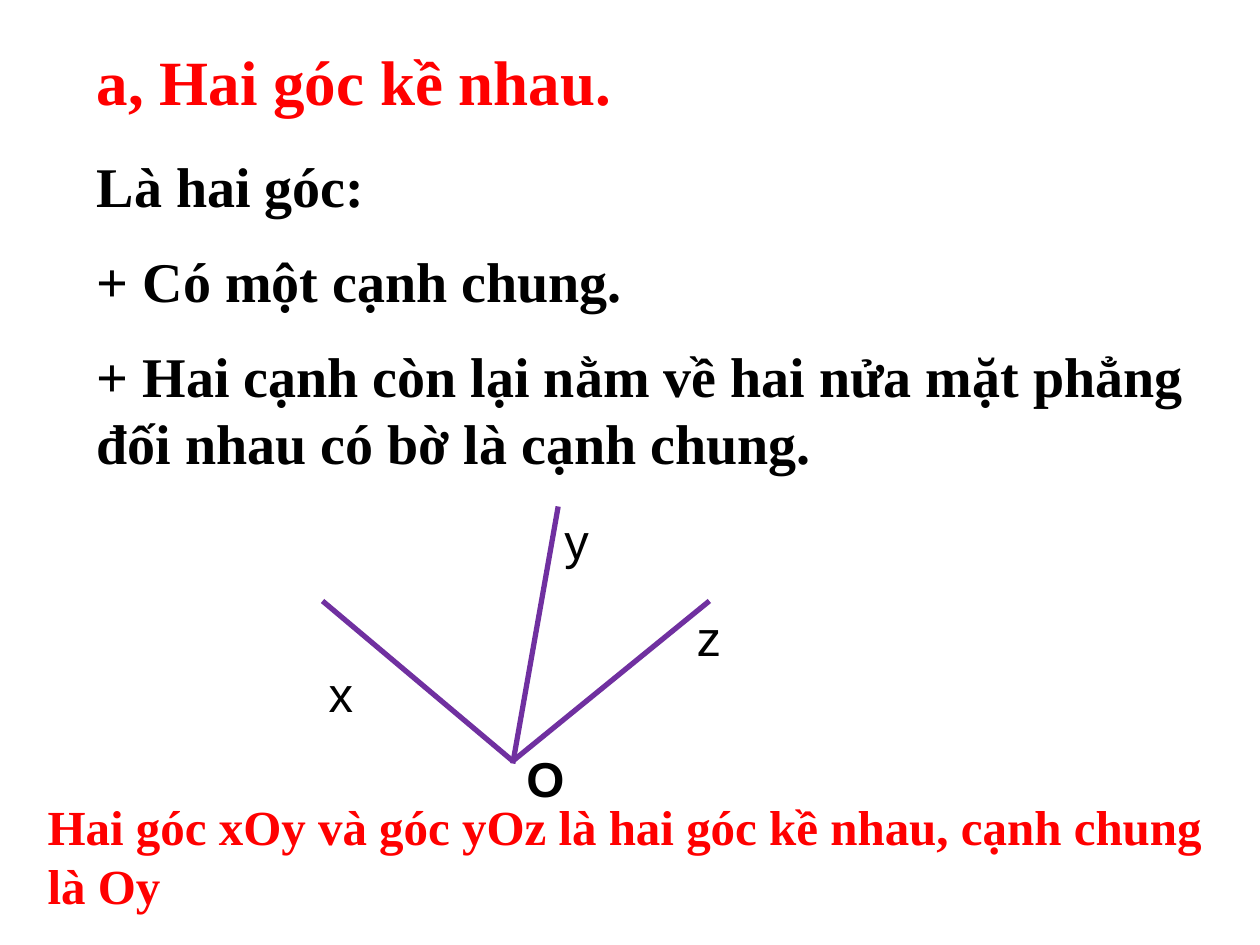
"""Build a slide defining adjacent angles, with a diagram of three rays from O."""
import pptx
import pptx.dml.color
import pptx.enum.shapes
import pptx.enum.text
import pptx.oxml.ns
import pptx.util
from lxml import etree
from pptx.util import Inches

COLORS = {"accent": "FF0000", "text": "000000", "ray": "7030A0"}
SERIF, SANS = "Times New Roman", "Arial"


def add_text(shapes, box, lines, size, color, font=SERIF, bold=True, wrap=True):
    shape = shapes.add_textbox(*(Inches(length) for length in box))
    frame = shape.text_frame
    frame.word_wrap = wrap
    frame.auto_size = pptx.enum.text.MSO_AUTO_SIZE.SHAPE_TO_FIT_TEXT
    frame.text = "\n".join(lines)
    for index, paragraph in enumerate(frame.paragraphs):
        paragraph.font.name = font
        paragraph.font.size = pptx.util.Pt(size)
        paragraph.font.bold = bold
        paragraph.font.color.rgb = pptx.dml.color.RGBColor.from_string(COLORS[color])
        if index:
            paragraph.space_before = pptx.util.Pt(size / 2)


presentation = pptx.Presentation()
presentation.slide_width = Inches(10)
presentation.slide_height = Inches(7.5)
slide = presentation.slides.add_slide(presentation.slide_layouts[6])

definition = [
    "Là hai góc:",
    "+ Có một cạnh chung.",
    "+ Hai cạnh còn lại nằm về hai nửa mặt phẳng đối nhau có bờ là cạnh chung.",
]
add_text(slide.shapes, (0.67, 0.29, 7.09, 0.71), ["a, Hai góc kề nhau."], 36, "accent")
add_text(slide.shapes, (0.67, 1.15, 8.9, 2.79), definition, 32, "text")

diagram = slide.shapes.add_group_shape()
vertex_x = 4.07
rays = [(4.43, 4.02, 6.06), (5.63, 4.77, 6.04), (2.56, 4.77, 6.04)]
for end_x, end_y, vertex_y in rays:
    ray = diagram.shapes.add_connector(
        pptx.enum.shapes.MSO_CONNECTOR.STRAIGHT,
        Inches(end_x), Inches(end_y), Inches(vertex_x), Inches(vertex_y),
    )
    ray.line.width = pptx.util.Pt(3)
    ray.line.color.rgb = pptx.dml.color.RGBColor.from_string(COLORS["ray"])
    etree.SubElement(ray._element.spPr, pptx.oxml.ns.qn("a:effectLst"))

point_labels = [
    ("O", (4.08, 5.89, 0.58, 0.74), True, False),
    ("x", (2.51, 5.22, 0.51, 0.74), False, True),
    ("z", (5.43, 4.77, 0.44, 0.74), False, False),
    ("y", (4.38, 4, 0.42, 0.74), False, True),
]
for label, box, bold, wrap in point_labels:
    add_text(diagram.shapes, box, [label], 28, "text", SANS, bold, wrap)

conclusion = "Hai góc xOy và góc yOz là hai góc kề nhau, cạnh chung là Oy"
add_text(slide.shapes, (0.28, 6.27, 9.72, 1.04), [conclusion], 28, "accent")

presentation.save("out.pptx")
